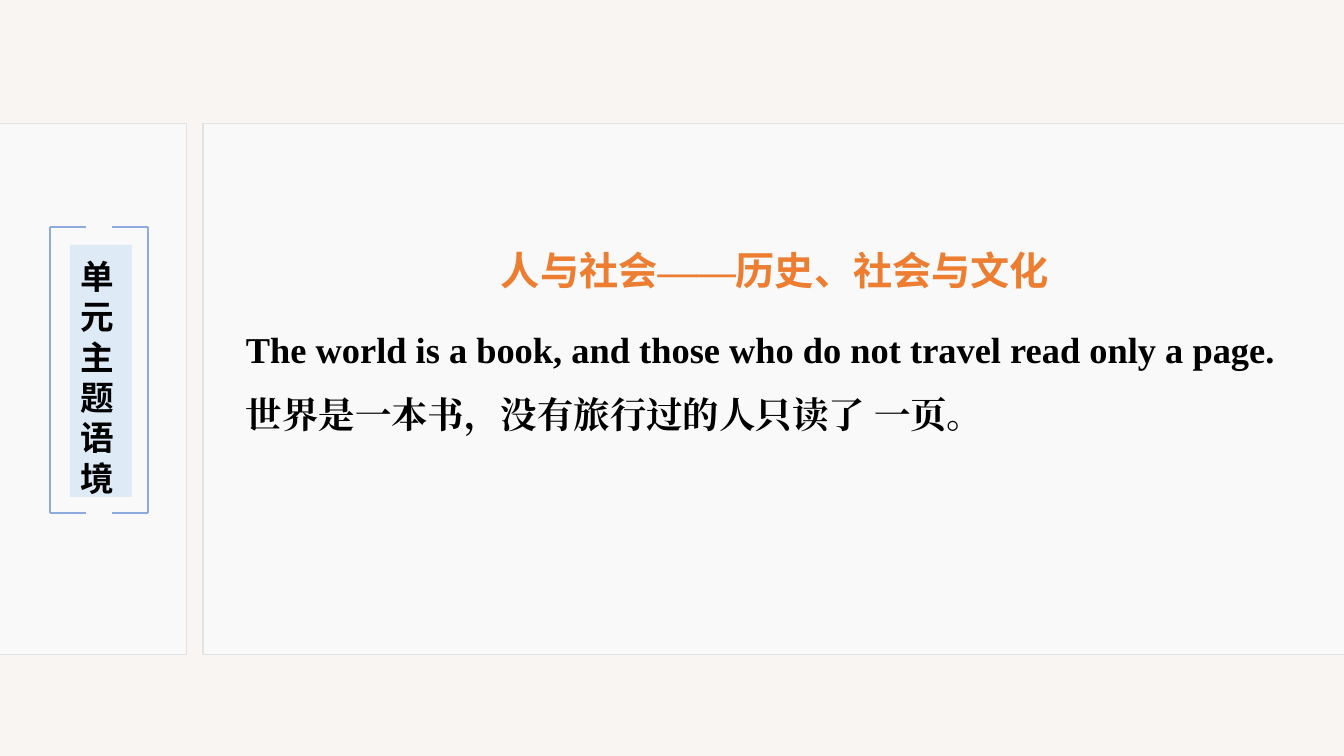
from lxml.etree import SubElement
from pptx import Presentation
from pptx.dml.color import RGBColor
from pptx.enum.shapes import MSO_CONNECTOR, MSO_SHAPE
from pptx.enum.text import MSO_ANCHOR, MSO_AUTO_SIZE, PP_ALIGN
from pptx.oxml.ns import qn
from pptx.util import Emu, Pt


def px(n):
    return Emu(round(n * 914400 / 100.8))


def color(value):
    return RGBColor.from_string(value)


class Deck:
    """Draws styled elements on the current slide."""

    SANS = "Noto Sans CJK SC"
    SERIF = "Times New Roman"
    BACKGROUND = "F8F5F3"
    PANEL = "F9F9F9"
    BORDER = "E2E2E2"
    BRACKET = "8FAADC"
    LABEL = "DEEBF7"
    TEXT = "000000"
    ACCENT = "ED7D31"

    def __init__(self, prs):
        self.s = prs.slides.add_slide(prs.slide_layouts[5])
        fill = self.s.background.fill
        fill.solid()
        fill.fore_color.rgb = color(self.BACKGROUND)

    def rect(self, x, y, w, h, fill, line=None):
        sp = self.s.shapes.add_shape(MSO_SHAPE.RECTANGLE, px(x), px(y), px(w), px(h))
        sp.shadow.inherit = False
        sp.fill.solid()
        sp.fill.fore_color.rgb = color(fill)
        if line:
            sp.line.color.rgb = color(line)
            sp.line.width = Pt(0.75)
        else:
            sp.line.fill.background()

    def line(self, x1, y1, x2, y2):
        cxn = self.s.shapes.add_connector(
            MSO_CONNECTOR.STRAIGHT, px(x1), px(y1), px(x2), px(y2))
        cxn.line.color.rgb = color(self.BRACKET)
        cxn.line.width = Pt(1.5)
        SubElement(cxn.element.spPr, qn("a:effectLst"))

    def format_run(self, r, size, font, fill):
        r.font.size = Pt(size)
        r.font.bold = True
        r.font.color.rgb = color(fill)
        r.font.name = font
        SubElement(r.font._element, qn("a:ea")).set("typeface", font)

    def text(self, x, y, w, h, lines, size, font, spacing):
        tf = self.s.shapes.add_textbox(px(x), px(y), px(w), px(h)).text_frame
        tf.word_wrap = True
        tf.text = "\n".join(lines)
        for p in tf.paragraphs:
            p.line_spacing = spacing
            self.format_run(p.runs[0], size, font, self.TEXT)

    def title(self, x, y, w, h, parts):
        sp = self.s.shapes.title
        self.s.shapes.element.append(sp.element)
        sp.left, sp.top, sp.width, sp.height = px(x), px(y), px(w), px(h)
        tf = sp.text_frame
        tf.margin_left = tf.margin_right = tf.margin_top = tf.margin_bottom = 0
        tf.vertical_anchor = MSO_ANCHOR.MIDDLE
        tf.auto_size = MSO_AUTO_SIZE.NONE
        tf.word_wrap = True
        p = tf.paragraphs[0]
        p.alignment = PP_ALIGN.CENTER
        for words, font in parts:
            r = p.add_run()
            r.text = words
            self.format_run(r, 28, font, self.ACCENT)


def main():
    prs = Presentation()
    prs.slide_width, prs.slide_height = px(1344), px(756)
    deck = Deck(prs)

    for x, w in ((203, 1144), (0, 187)):
        deck.rect(x, 124, w, 531, deck.PANEL, deck.BORDER)

    top, bottom, arm = 227, 513, 36
    for x, inward in ((50, 1), (148, -1)):
        deck.line(x, top, x, bottom)
        for y in (top, bottom):
            deck.line(x, y, x + inward * arm, y)

    deck.rect(70, 245, 62, 252, deck.LABEL)
    deck.text(71, 251, 89, 254, "单元主题语境", 24, deck.SANS, Pt(28.8))
    deck.text(236, 300, 1077, 134, (
        "The world is a book, and those who do not travel read only a page.",
        "世界是一本书，没有旅行过的人只读了 一页。",
    ), 26, deck.SERIF, 1.5)
    deck.title(466, 246, 618, 47, (
        ("人与社会", deck.SANS),
        ("——", deck.SERIF),
        ("历史、社会与文化", deck.SANS),
    ))
    prs.save("out.pptx")


if __name__ == "__main__":
    main()
